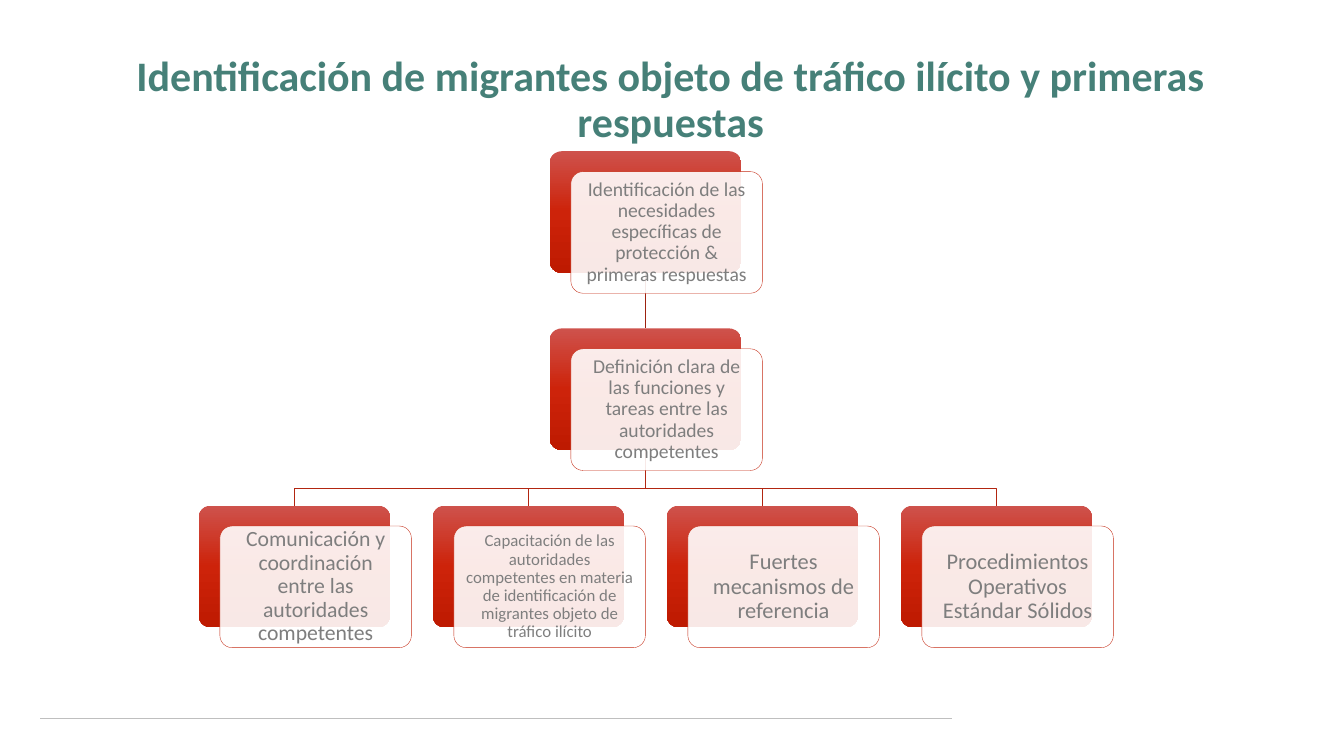
from lxml import etree
from pptx import Presentation
from pptx.dml.color import RGBColor
from pptx.enum import shapes, text
from pptx.oxml import parse_xml
from pptx.oxml.ns import nsdecls, qn
from pptx.util import Cm, Pt

FONT = "Calibri"
TEAL = RGBColor(0x46, 0x80, 0x78)
GREY = RGBColor(0x7E, 0x7E, 0x7E)
RULE_GREY = RGBColor(0xBF, 0xBF, 0xBF)
WHITE = RGBColor(0xFF, 0xFF, 0xFF)
CARD_LINE = RGBColor(0xC4, 0x2A, 0x13)
BRANCH_RED = RGBColor(0xB2, 0x26, 0x11)
TRUNK_RED = RGBColor(0x9D, 0x22, 0x0F)
GRADIENT = [
    (0, RGBColor(0xCE, 0x52, 0x4C)),
    (50, RGBColor(0xCD, 0x23, 0x0A)),
    (100, RGBColor(0xBE, 0x1A, 0x01)),
]

# Chart grid, in centimetres
BOX_WIDTH, BOX_HEIGHT = 9.65, 6.13
CHART_LEFT, CHART_TOP = 10.01, 7.62
COLUMN_STEP, LEVEL_STEP = 11.79, 8.93
CARD_DX, CARD_DY = 1.07, 1.03
BRANCH_DROP = 1.9

TITLE = "Identificación de migrantes objeto de tráfico ilícito y primeras respuestas"

# Column, level, font size, inset, wording
NEEDS = (1.5, 0, 28, 0.48, "Identificación de las necesidades específicas de "
         "protección & primeras respuestas")
ROLES = (1.5, 1, 28, 0.48, "Definición clara de las funciones y tareas entre "
         "las autoridades competentes")
MEASURES = [
    (0, 2, 31, 0.51, "Comunicación y coordinación entre las autoridades competentes"),
    (1, 2, 24, 0.43, "Capacitación de las autoridades competentes en materia de "
     "identificación de migrantes objeto de tráfico ilícito"),
    (2, 2, 32, 0.51, "Fuertes mecanismos de referencia"),
    (3, 2, 32, 0.51, "Procedimientos Operativos Estándar Sólidos"),
]


def write_text(shape, wording, size, color, inset_x, inset_y, bold=False):
    frame = shape.text_frame
    frame_format = {
        "word_wrap": True,
        "vertical_anchor": text.MSO_ANCHOR.MIDDLE,
        "margin_left": Cm(inset_x),
        "margin_right": Cm(inset_x),
        "margin_top": Cm(inset_y),
        "margin_bottom": Cm(inset_y),
    }
    for name, value in frame_format.items():
        setattr(frame, name, value)
    paragraph = frame.paragraphs[0]
    paragraph.alignment = text.PP_ALIGN.CENTER
    paragraph.line_spacing = 0.9
    run = paragraph.add_run()
    run.text = wording
    for name, value in {"name": FONT, "size": Pt(size), "bold": bold}.items():
        setattr(run.font, name, value)
    run.font.color.rgb = color


def fill_gradient(shape):
    stops = "".join(
        f'<a:gs pos="{position * 1000}"><a:srgbClr val="{color}"/></a:gs>'
        for position, color in GRADIENT
    )
    gradient = parse_xml(
        f'<a:gradFill {nsdecls("a")}><a:gsLst>{stops}</a:gsLst>'
        '<a:lin ang="5400000" scaled="0"/></a:gradFill>'
    )
    shape._element.spPr.find(qn("a:prstGeom")).addnext(gradient)


def add_rounded(slide, left, top):
    shape = slide.shapes.add_shape(
        shapes.MSO_SHAPE.ROUNDED_RECTANGLE,
        Cm(left), Cm(top), Cm(BOX_WIDTH), Cm(BOX_HEIGHT),
    )
    shape.adjustments[0] = 0.1
    shape.shadow.inherit = False
    return shape


def add_node(slide, column, level, size, inset, wording):
    """Add a red box with its text card in front; return the red box."""
    left = CHART_LEFT + column * COLUMN_STEP
    top = CHART_TOP + level * LEVEL_STEP
    box = add_rounded(slide, left, top)
    box.line.fill.background()
    fill_gradient(box)

    card = add_rounded(slide, left + CARD_DX, top + CARD_DY)
    card.fill.solid()
    card.fill.fore_color.rgb = WHITE
    color = card._element.spPr.find(qn("a:solidFill"))[0]
    etree.SubElement(color, qn("a:alpha"), val="90000")
    card.line.color.rgb = CARD_LINE
    card.line.width = Pt(0.5)
    write_text(card, wording, size, GREY, inset, inset)
    return box


def add_line(slide, start, end, color, width):
    line = slide.shapes.add_connector(shapes.MSO_CONNECTOR.STRAIGHT, *start, *end)
    line.line.color.rgb = color
    line.line.width = Pt(width)
    etree.SubElement(line._element.spPr, qn("a:effectLst"))
    return line


def send_to_back(slide, shape):
    slide.shapes._spTree.insert(2, shape._element)


def bottom_middle(box):
    return box.left + box.width // 2, box.top + box.height


def top_middle(box):
    return box.left + box.width // 2, box.top


def add_trunk(slide, parent, child):
    trunk = add_line(slide, bottom_middle(parent), top_middle(child), TRUNK_RED, 0.5)
    trunk.begin_connect(parent, 2)
    trunk.end_connect(child, 0)
    send_to_back(slide, trunk)


def add_branch(slide, parent, child):
    start, end = bottom_middle(parent), top_middle(child)
    bend = start[1] + Cm(BRANCH_DROP)
    builder = slide.shapes.build_freeform(*start)
    builder.add_line_segments([(start[0], bend), (end[0], bend), end], close=False)
    branch = builder.convert_to_shape()
    branch.fill.background()
    branch.line.color.rgb = BRANCH_RED
    branch.line.width = Pt(0.5)
    branch.shadow.inherit = False
    send_to_back(slide, branch)


def main():
    presentation = Presentation()
    presentation.slide_width = Cm(67.72)
    presentation.slide_height = Cm(38.1)
    slide = presentation.slides.add_slide(presentation.slide_layouts[6])

    # Footer rule and title
    add_line(slide, (Cm(2.03), Cm(36.2)), (Cm(47.96), Cm(36.2)), RULE_GREY, 2.25)
    title = slide.shapes.add_textbox(Cm(2.03), Cm(1.4), Cm(63.53), Cm(7.37))
    write_text(title, TITLE, 60, TEAL, 0.51, 0.25, bold=True)

    # Hierarchy
    needs = add_node(slide, *NEEDS)
    roles = add_node(slide, *ROLES)
    measures = [add_node(slide, *measure) for measure in MEASURES]

    # Links behind the boxes
    add_trunk(slide, needs, roles)
    for measure in measures:
        add_branch(slide, roles, measure)

    presentation.save("out.pptx")


if __name__ == "__main__":
    main()
